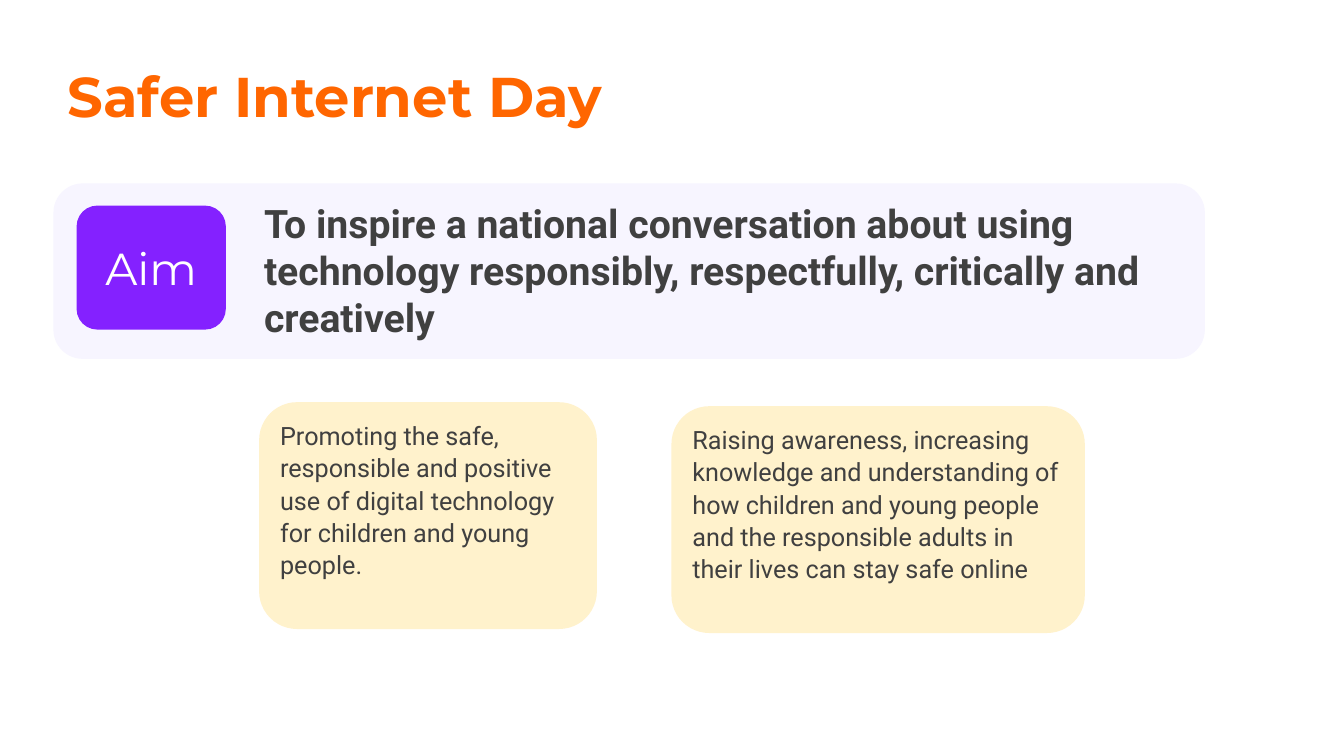
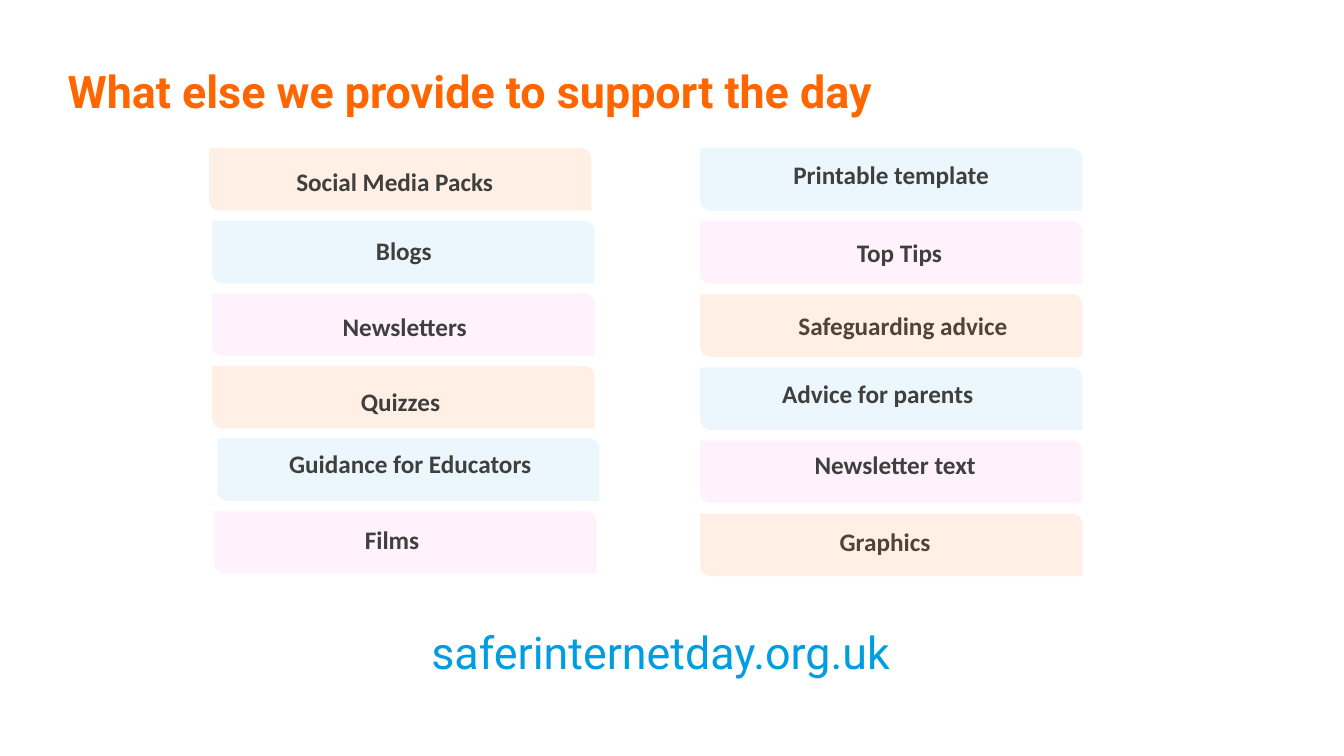
from typing import NamedTuple

from lxml.etree import SubElement
from pptx import Presentation
from pptx.dml.color import RGBColor
from pptx.enum.shapes import MSO_SHAPE
from pptx.enum.text import MSO_ANCHOR, MSO_AUTO_SIZE, PP_ALIGN
from pptx.oxml.ns import qn
from pptx.util import Inches, Pt

ORANGE, BLUE, PINK = "FF6600", "009DE0", "FFAEF0"
PURPLE, LILAC, CREAM = "8421FF", "F7F5FF", "FFF2CC"
WHITE, DARK, LABEL_GREY = "FFFFFF", "404040", "3F3F3E"
OPACITY = {ORANGE: 10, BLUE: 8, PINK: 15}
BAND_W, BAND_H = 3.79, 0.62
FIRST_BAND_Y = 1.78


class Band(NamedTuple):
    label: str
    color: str
    center_x: float
    text_x: float
    text_y: float
    text_w: float
    text_behind: bool = False


class Column(NamedTuple):
    pitch: float
    bands: list[Band]


class Card(NamedTuple):
    text: str
    x: float
    y: float
    w: float


COLUMNS = [
    Column(0.72, [
        Band("Social Media Packs", ORANGE, 3.97, 2.84, 1.63, 2.31),
        Band("Blogs", BLUE, 4, 3.63, 2.32, 0.89),
        Band("Newsletters", PINK, 4, 3.3, 3.07, 1.59),
        Band("Quizzes", ORANGE, 4, 3.48, 3.82, 1.02),
        Band("Guidance for Educators", BLUE, 4.05, 2.77, 4.43, 2.8),
        Band("Films", PINK, 4.02, 3.52, 5.19, 1.02),
    ]),
    Column(0.725, [
        Band("Printable template", BLUE, 8.84, 7.77, 1.57, 2.61),
        Band("Top Tips", PINK, 8.84, 8.4, 2.34, 1.59),
        Band("Safeguarding advice", ORANGE, 8.84, 7.82, 3.06, 2.45, True),
        Band("Advice for parents", BLUE, 8.84, 7.66, 3.74, 2.49),
        Band("Newsletter text", PINK, 8.84, 7.98, 4.44, 1.92),
        Band("Graphics", ORANGE, 8.84, 8.23, 5.21, 1.59, True),
    ]),
]

CARDS = [
    Card("Promoting the safe, responsible and positive use of digital "
         "technology for children and young people.", 2.57, 3.99, 3.35),
    Card("Raising awareness, increasing knowledge and understanding of how "
         "children and young people and the responsible adults in their "
         "lives can stay safe online", 6.66, 4.03, 4.1),
]


def rgb(color: str) -> RGBColor:
    return RGBColor.from_string(color)


def write(sp, text: str, *, size: float, color: str, font: str = "Roboto",
          bold: bool = False, spacing: float = 1.0, align=PP_ALIGN.LEFT,
          anchor=MSO_ANCHOR.TOP, wrap: bool = True) -> None:
    tf = sp.text_frame
    tf.auto_size = MSO_AUTO_SIZE.NONE
    tf.word_wrap = wrap
    tf.vertical_anchor = anchor
    p = tf.paragraphs[0]
    p.alignment = align
    p.line_spacing = spacing
    r = p.add_run()
    r.text = text
    r.font.name = font
    r.font.size = Pt(size)
    r.font.bold = bold
    r.font.color.rgb = rgb(color)


def add_text(s, text: str, x: float, y: float, w: float, h: float, **fmt) -> None:
    box = s.shapes.add_textbox(Inches(x), Inches(y), Inches(w), Inches(h))
    write(box, text, **fmt)


def add_box(s, kind, x: float, y: float, w: float, h: float, color: str,
            opacity: int = 100):
    sp = s.shapes.add_shape(kind, Inches(x), Inches(y), Inches(w), Inches(h))
    sp.shadow.inherit = False
    sp.line.fill.background()
    sp.fill.solid()
    sp.fill.fore_color.rgb = rgb(color)
    if opacity < 100:
        clr = sp.fill._xPr.find(".//" + qn("a:srgbClr"))
        SubElement(clr, qn("a:alpha")).set("val", str(opacity * 1000))
    return sp


def add_slide(prs, title: str, *, size: float, font: str):
    s = prs.slides.add_slide(prs.slide_layouts[5])
    sp = s.shapes.title
    sp.left, sp.top = Inches(0.57), Inches(0.64)
    sp.width, sp.height = Inches(11.5), Inches(0.86)
    write(sp, title, size=size, font=font, color=ORANGE, bold=True, spacing=0.9)
    return s


def add_band(s, band: Band, center_y: float) -> None:
    """Draw a band as a quarter-turned shape, with its label over or under it."""
    def label() -> None:
        add_text(s, band.label, band.text_x, band.text_y, band.text_w, 0.37,
                 size=18, font="Calibri", color=LABEL_GREY, bold=True,
                 spacing=0.9)

    if band.text_behind:
        label()
    sp = add_box(s, MSO_SHAPE.ROUND_2_DIAG_RECTANGLE,
                 band.center_x - BAND_H / 2, center_y - BAND_W / 2,
                 BAND_H, BAND_W, band.color, OPACITY[band.color])
    sp.rotation = 90
    if not band.text_behind:
        label()


def build_aim(prs) -> None:
    s = add_slide(prs, "Safer Internet Day", size=40, font="Montserrat")
    rounded = MSO_SHAPE.ROUNDED_RECTANGLE
    add_box(s, rounded, 0.53, 1.82, 11.42, 1.74, LILAC)
    tag = add_box(s, rounded, 0.76, 2.04, 1.48, 1.23, PURPLE)
    write(tag, "Aim", size=32, font="Montserrat", color=WHITE, wrap=False,
          align=PP_ALIGN.CENTER, anchor=MSO_ANCHOR.MIDDLE)
    add_text(s, "To inspire a national conversation about using technology "
             "responsibly, respectfully, critically and creatively",
             2.52, 1.93, 9.59, 1.51, size=28, color=DARK, bold=True)
    for card in CARDS:
        sp = add_box(s, rounded, card.x, card.y, card.w, 2.25, CREAM)
        write(sp, card.text, size=18, color=DARK, spacing=1.07)


def build_support(prs) -> None:
    s = add_slide(prs, "What else we provide to support the day",
                  size=32, font="Roboto")
    for column in COLUMNS:
        for i, band in enumerate(column.bands):
            add_band(s, band, FIRST_BAND_Y + i * column.pitch)
    add_text(s, "saferinternetday.org.uk", 4.18, 6.15, 4.97, 0.64,
             size=32, color=BLUE, wrap=False)


def main() -> None:
    prs = Presentation()
    prs.slide_width, prs.slide_height = Inches(13.33), Inches(7.5)
    build_aim(prs)
    build_support(prs)
    prs.save("out.pptx")


if __name__ == "__main__":
    main()
